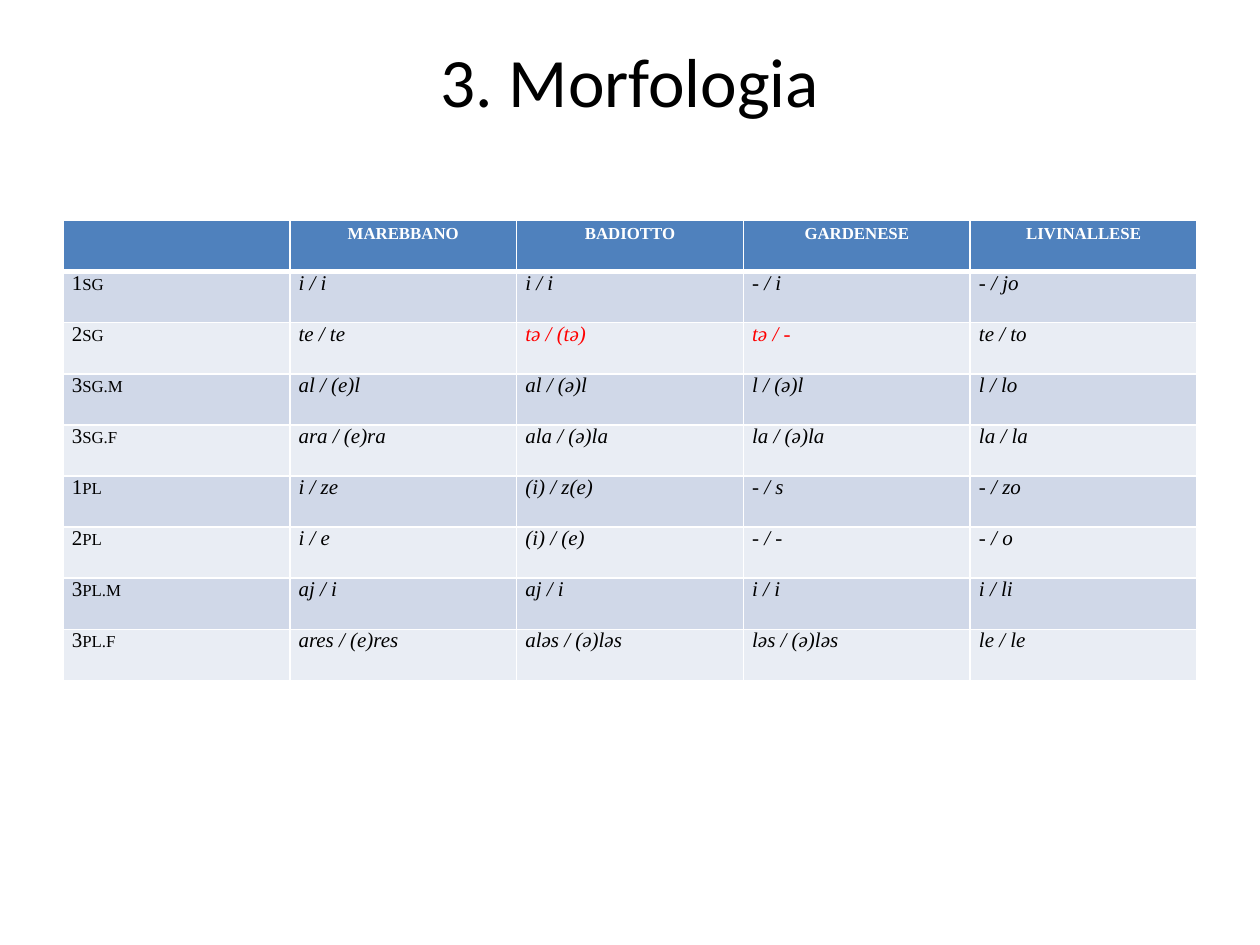
from lxml import etree
from pptx import Presentation
from pptx import util as u
from pptx.dml.color import RGBColor
from pptx.enum import text
from pptx.oxml import ns

BLACK = RGBColor(0x00, 0x00, 0x00)
WHITE = RGBColor(0xFF, 0xFF, 0xFF)
RED = RGBColor(0xFF, 0x00, 0x00)
BLUE = RGBColor(0x4F, 0x81, 0xBD)
BANDS = (RGBColor(0xD0, 0xD8, 0xE8), RGBColor(0xE9, 0xED, 0xF4))

DIALECTS = ("marebbano", "badiotto", "gardenese", "livinallese")
CLITICS = (
    ("1", "sg", "i / i", "i / i", "- / i", "- / jo"),
    ("2", "sg", "te / te", "tə / (tə)", "tə / -", "te / to"),
    ("3", "sg.m", "al / (e)l", "al / (ə)l", "l / (ə)l", "l / lo"),
    ("3", "sg.f", "ara / (e)ra", "ala / (ə)la", "la / (ə)la", "la / la"),
    ("1", "pl", "i / ze", "(i) / z(e)", "- / s", "- / zo"),
    ("2", "pl", "i / e", "(i) / (e)", "- / -", "- / o"),
    ("3", "pl.m", "aj / i", "aj / i", "i / i", "i / li"),
    ("3", "pl.f", "ares / (e)res", "aləs / (ə)ləs", "ləs / (ə)ləs", "le / le"),
)
HIGHLIGHTED = {"tə / (tə)", "tə / -"}


class Deck:
    """Builds slides with a Calibri title and a banded Times New Roman table."""

    def __init__(self, prs):
        self.title_font, self.title_size = "Calibri", u.Pt(39.6)
        self.body_font, self.body_size = "Times New Roman", u.Pt(12)
        self.s = prs.slides.add_slide(prs.slide_layouts[6])

    def title(self, words, left, top, width, height):
        sp = self.s.shapes.add_textbox(left, top, width, height)
        tf = sp.text_frame
        tf.word_wrap = True
        tf.margin_top = tf.margin_bottom = 0
        tf.vertical_anchor = text.MSO_ANCHOR.TOP
        tf.text = words
        p = tf.paragraphs[0]
        p.alignment = text.PP_ALIGN.CENTER
        f = p.runs[0].font
        f.name, f.size, f.color.rgb = self.title_font, self.title_size, BLACK

    def table(self, rows, cols, left, top, width, height):
        tbl = self.s.shapes.add_table(rows, cols, left, top, width, height).table
        for row in tbl.rows:
            row.height = height // rows
        return tbl

    def border(self, cell, side, points):
        ln = etree.SubElement(cell._tc.get_or_add_tcPr(), ns.qn(f"a:ln{side}"), w=str(u.Pt(points)))
        fill = etree.SubElement(ln, ns.qn("a:solidFill"))
        etree.SubElement(fill, ns.qn("a:srgbClr"), val=str(WHITE))

    def cell(self, cell, fill, top=1, bottom=1):
        cell.margin_left = cell.margin_right = u.Inches(0.07)
        cell.margin_top = cell.margin_bottom = 0
        for side, points in (("L", 1), ("R", 1), ("T", top), ("B", bottom)):
            self.border(cell, side, points)
        cell.fill.solid()
        cell.fill.fore_color.rgb = fill

    def run(self, cell, words, color=BLACK, bold=False, italic=False, small_caps=False):
        r = cell.text_frame.paragraphs[0].add_run()
        r.text = words
        f = r.font
        f.name, f.size, f.color.rgb = self.body_font, self.body_size, color
        f.bold, f.italic = bold, italic
        if small_caps:
            r._r.get_or_add_rPr().set("cap", "small")


def main():
    prs = Presentation()
    prs.slide_width, prs.slide_height = u.Inches(10), u.Inches(7.5)
    deck = Deck(prs)
    deck.title("3. Morfologia", u.Inches(0.5), u.Inches(0.3), u.Inches(9), u.Inches(1.25))
    tbl = deck.table(len(CLITICS) + 1, len(DIALECTS) + 1,
                     u.Inches(0.5), u.Inches(1.75), u.Inches(9), u.Inches(3.65))

    for col in range(len(DIALECTS) + 1):
        deck.cell(tbl.cell(0, col), BLUE, bottom=3)
    for col, dialect in enumerate(DIALECTS, 1):
        head = tbl.cell(0, col)
        deck.run(head, dialect, WHITE, bold=True, small_caps=True)
        head.text_frame.paragraphs[0].alignment = text.PP_ALIGN.CENTER

    for row, (person, number, *forms) in enumerate(CLITICS, 1):
        for col in range(len(forms) + 1):
            deck.cell(tbl.cell(row, col), BANDS[(row - 1) % 2], top=3 if row == 1 else 1)
        deck.run(tbl.cell(row, 0), person)
        deck.run(tbl.cell(row, 0), number, small_caps=True)
        for col, form in enumerate(forms, 1):
            color = RED if form in HIGHLIGHTED else BLACK
            deck.run(tbl.cell(row, col), form, color, italic=True)

    prs.save("out.pptx")


if __name__ == "__main__":
    main()
